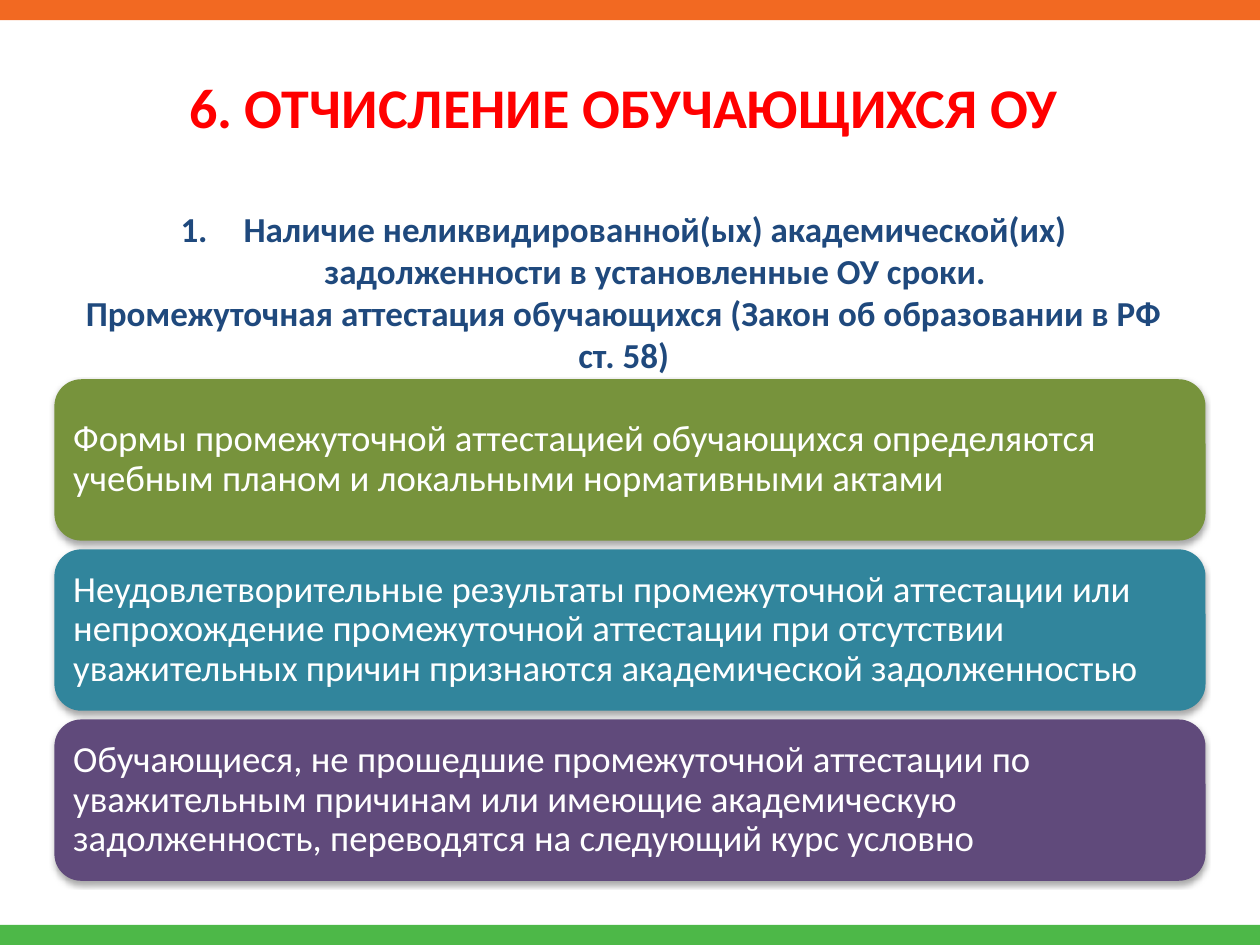
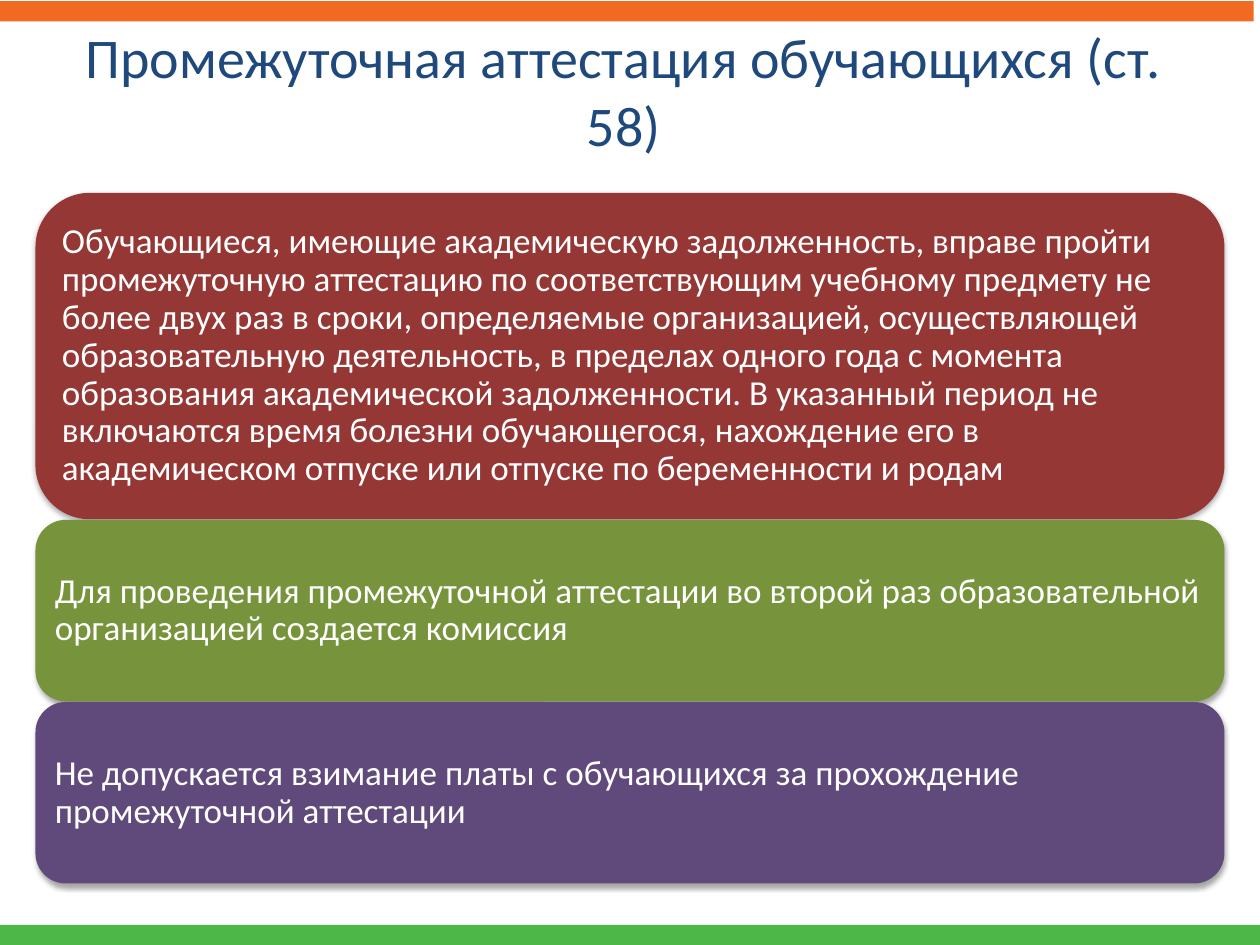
from lxml import etree
from pptx import Presentation
from pptx.dml.color import RGBColor
from pptx.enum.shapes import MSO_SHAPE
from pptx.enum.text import MSO_ANCHOR, PP_ALIGN
from pptx.oxml import parse_xml
from pptx.oxml.ns import nsdecls, qn
from pptx.util import Pt

RECTANGLE = MSO_SHAPE.RECTANGLE
ROUNDED = MSO_SHAPE.ROUNDED_RECTANGLE
MIDDLE = MSO_ANCHOR.MIDDLE
LEFT, CENTER = PP_ALIGN.LEFT, PP_ALIGN.CENTER

WIDTH, HEIGHT = 720, 540
BAND_HEIGHT = 11.5
TEXT_LEFT, TEXT_WIDTH = 36.7, 639.4
FONT = "Calibri"
ORANGE, BAND_GREEN = "F26922", "4DB848"
RED, NAVY, WHITE = "FF0000", "1F497D", "FFFFFF"
GREEN, TEAL, PURPLE, MAROON = "77933C", "31859C", "604A7B", "953735"


def color(value):
    return RGBColor.from_string(value)


def set_attributes(target, values):
    for name, value in values.items():
        setattr(target, name, value)


class Deck:
    """Holds the shared style and the slide being built."""

    def __init__(self):
        self.presentation = Presentation()
        self.presentation.slide_width = Pt(WIDTH)
        self.presentation.slide_height = Pt(HEIGHT)
        self.slide = None

    def add_slide(self, band_left=0, band_top=0):
        """Start a slide; the arguments place its upper band."""
        self.slide = self.presentation.slides.add_slide(self.presentation.slide_layouts[6])
        self.block(RECTANGLE, band_left, band_top, WIDTH, BAND_HEIGHT, ORANGE)
        self.block(RECTANGLE, 0, HEIGHT - BAND_HEIGHT, WIDTH, BAND_HEIGHT, BAND_GREEN)

    def block(self, kind, left, top, width, height, fill):
        shape = self.slide.shapes.add_shape(kind, Pt(left), Pt(top), Pt(width), Pt(height))
        shape.shadow.inherit = False
        shape.fill.solid()
        shape.fill.fore_color.rgb = color(fill)
        shape.line.fill.background()
        return shape

    def fill_text(self, shape, texts, size, font_color, bold=False, align=CENTER,
                  spacing=1.0, margin_x=7.2, margin_y=3.6):
        frame = shape.text_frame
        set_attributes(frame, {
            "word_wrap": True, "vertical_anchor": MIDDLE,
            "margin_left": Pt(margin_x), "margin_right": Pt(margin_x),
            "margin_top": Pt(margin_y), "margin_bottom": Pt(margin_y)})
        frame.text = "\n".join(texts)
        for paragraph in frame.paragraphs:
            set_attributes(paragraph, {"alignment": align, "line_spacing": spacing})
            font = paragraph.runs[0].font
            set_attributes(font, {"name": FONT, "size": Pt(size), "bold": bold})
            font.color.rgb = color(font_color)
        return frame

    def text(self, top, height, texts, size, font_color, bold=False):
        box = self.slide.shapes.add_textbox(
            Pt(TEXT_LEFT), Pt(top), Pt(TEXT_WIDTH), Pt(height))
        return self.fill_text(box, texts, size, font_color, bold)

    def title(self, text, font_color, top=20.9, bold=False):
        self.text(top, 61.2, [text], 32, font_color, bold)

    def number(self, paragraph):
        """Give the paragraph a hanging automatic number."""
        properties = paragraph._p.get_or_add_pPr()
        properties.set("marL", str(Pt(36)))
        properties.set("indent", str(-Pt(36)))
        etree.SubElement(properties, qn("a:buFont"), typeface="+mj-lt")
        etree.SubElement(properties, qn("a:buAutoNum"), type="arabicPeriod")

    def shadow(self, shape):
        properties = shape._element.spPr
        properties.remove(properties.find(qn("a:effectLst")))
        properties.append(parse_xml(
            f'<a:effectLst {nsdecls("a")}><a:outerShdw blurRad="{Pt(3.1)}" '
            f'dist="{Pt(1.8)}" dir="5400000" rotWithShape="0"><a:srgbClr val="000000">'
            '<a:alpha val="35000"/></a:srgbClr></a:outerShdw></a:effectLst>'))

    def panels(self, left, top, gap, size, margin, rows):
        """Stack centred panels downwards; each row is (height, fill, text)."""
        for height, fill, text in rows:
            panel = self.block(ROUNDED, left, top, WIDTH - 2 * left, height, fill)
            self.shadow(panel)
            self.fill_text(panel, [text], size, WHITE, align=LEFT, spacing=0.9,
                           margin_x=margin, margin_y=margin)
            top += height + gap


def expulsion_slide(deck):
    deck.add_slide()
    deck.title("6. ОТЧИСЛЕНИЕ ОБУЧАЮЩИХСЯ ОУ", RED, top=30, bold=True)
    grounds = deck.text(113.9, 104.8, [
        "Наличие неликвидированной(ых) академической(их) задолженности "
        "в установленные ОУ сроки.",
        "Промежуточная аттестация обучающихся (Закон об образовании в РФ ст. 58)",
    ], 20, NAVY, bold=True)
    deck.number(grounds.paragraphs[0])
    deck.panels(31.1, 216.7, 5, 21, 6.3, [
        (92.2, GREEN, "Формы промежуточной аттестацией обучающихся определяются "
                      "учебным планом и локальными нормативными актами"),
        (92.2, TEAL, "Неудовлетворительные результаты промежуточной аттестации или "
                     "непрохождение промежуточной аттестации при отсутствии "
                     "уважительных причин признаются академической задолженностью"),
        (92.2, PURPLE, "Обучающиеся, не прошедшие промежуточной аттестации по "
                       "уважительным причинам или имеющие академическую "
                       "задолженность, переводятся на следующий курс условно"),
    ])


def attestation_slide(deck):
    deck.add_slide(band_left=-3.6, band_top=0.7)
    deck.title("Промежуточная аттестация обучающихся (ст. 58)", NAVY)
    deck.panels(20.3, 110.2, 0.4, 20, 6, [
        (186.5, MAROON, "Обучающиеся, имеющие академическую задолженность, вправе пройти "
                        "промежуточную аттестацию по соответствующим учебному предмету не "
                        "более двух раз в сроки, определяемые организацией, осуществляющей "
                        "образовательную деятельность, в пределах одного года с момента "
                        "образования академической задолженности. В указанный период не "
                        "включаются время болезни обучающегося, нахождение его в "
                        "академическом отпуске или отпуске по беременности и родам"),
        (103.7, GREEN, "Для проведения промежуточной аттестации во второй раз "
                       "образовательной организацией создается комиссия"),
        (103.7, PURPLE, "Не допускается взимание платы с обучающихся за прохождение "
                        "промежуточной аттестации"),
    ])


def main():
    deck = Deck()
    expulsion_slide(deck)
    attestation_slide(deck)
    deck.presentation.save("out.pptx")


if __name__ == "__main__":
    main()
